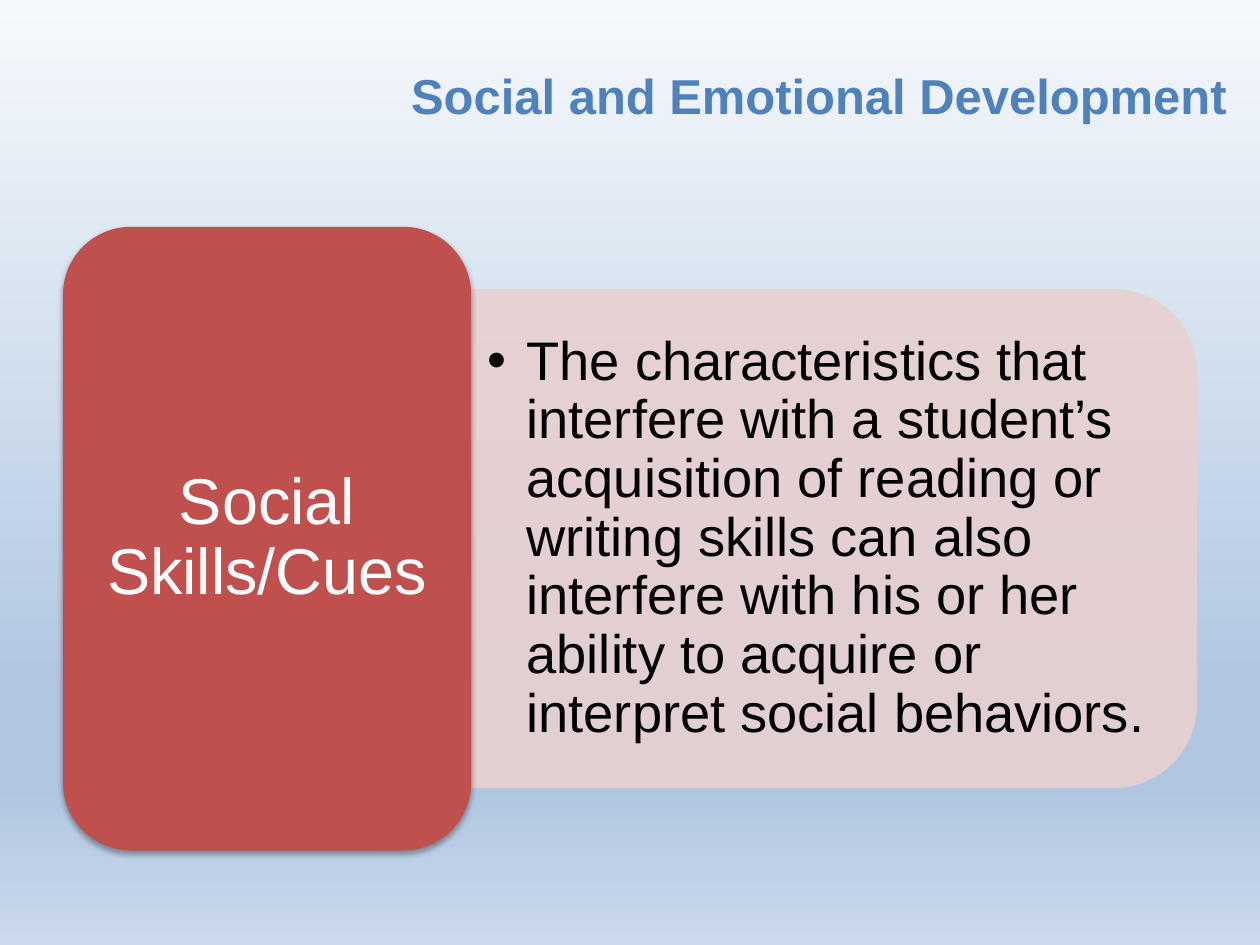
from lxml.etree import SubElement
from pptx import Presentation
from pptx.dml.color import RGBColor
from pptx.enum.shapes import MSO_SHAPE as Form
from pptx.enum.text import MSO_ANCHOR as Anchor, MSO_AUTO_SIZE as Fit, PP_ALIGN as Align
from pptx.oxml import parse_xml
from pptx.oxml.ns import nsdecls, qn
from pptx.util import Inches, Pt

WIDE, HIGH = 10, 7.5
STOPS = [(0, "F6F9FC"), (74, "B0C6E1"), (83, "B0C6E1"), (100, "CAD9EB")]


def tint(color, code):
    color.rgb = RGBColor.from_string(code)


def place(shape, box):
    shape.left, shape.top, shape.width, shape.height = map(Inches, box)


def write(shape, text, size, code, align, pads=(0.1, 0.05), bold=False, space=1.0):
    """Fill a shape with one formatted paragraph, centred in height."""
    frame = shape.text_frame
    frame.text = text
    frame.word_wrap = True
    frame.auto_size = Fit.NONE
    frame.vertical_anchor = Anchor.MIDDLE
    frame.margin_left = frame.margin_right = Inches(pads[0])
    frame.margin_top = frame.margin_bottom = Inches(pads[1])
    para = frame.paragraphs[0]
    para.alignment = align
    para.line_spacing = space
    para.space_before = Pt(0)
    font = para.runs[0].font
    font.name, font.size, font.bold = "Arial", Pt(size), bold
    tint(font.color, code)
    return para


def block(slide, form, box, code):
    shape = slide.shapes.add_shape(form, *map(Inches, box))
    shape.shadow.inherit = False
    shape.fill.solid()
    tint(shape.fill.fore_color, code)
    shape.line.fill.background()
    return shape


def paint(slide):
    """Vertical four-stop background."""
    fill = slide.background.fill
    fill.gradient()
    fill.gradient_angle = 270
    root = slide.background._cSld.find(".//" + qn("a:gsLst"))
    for stop in list(root):
        root.remove(stop)
    for spot, code in STOPS:
        stop = SubElement(root, qn("a:gs"), pos=str(spot * 1000))
        SubElement(stop, qn("a:srgbClr"), val=code)


def head(slide, box):
    title = slide.shapes.title
    place(title, box)
    write(title, "Social and Emotional Development", 28, "4F81BD", Align.CENTER, bold=True)


def panel(slide, box):
    """Pale panel rounded on its right side, with the bullet on top."""
    left, top, wide, high = box
    # The form is turned a quarter, so its sides swap around the same centre
    turn = (left + (wide - high) / 2, top + (high - wide) / 2, high, wide)
    shape = block(slide, Form.ROUND_2_SAME_RECTANGLE, turn, "E8D0D0")
    shape.rotation = 90
    color = shape.fill._xPr.find(".//" + qn("a:srgbClr"))
    SubElement(color, qn("a:alpha"), val="90000")

    body = slide.placeholders[1]
    place(body, (left, top + 0.19, wide - 0.19, high - 0.38))
    slide.shapes._spTree.append(body._element)
    para = write(
        body,
        "The characteristics that interfere with a student’s acquisition of reading "
        "or writing skills can also interfere with his or her ability to acquire or "
        "interpret social behaviors.",
        31, "000000", Align.LEFT, (0.13, 0.06), space=0.9)
    props = para._p.get_or_add_pPr()
    props.set("marL", str(Inches(0.31)))
    props.set("indent", str(-Inches(0.31)))
    SubElement(props, qn("a:buChar"), char="•")


def card(slide, box):
    """Red label card with a soft shadow below."""
    shape = block(slide, Form.ROUNDED_RECTANGLE, box, "C0504D")
    glow = shape._element.spPr.find(qn("a:effectLst"))
    glow.append(parse_xml(
        f'<a:outerShdw {nsdecls("a")} blurRad="{Pt(3.1)}" dist="{Pt(1.8)}" '
        'dir="5400000" rotWithShape="0"><a:srgbClr val="000000">'
        '<a:alpha val="35000"/></a:srgbClr></a:outerShdw>'))
    # The rounded corners already hold the text in, so the margins stay small
    write(shape, "Social Skills/Cues", 37, "FFFFFF", Align.CENTER, (0.15, 0.08), space=0.9)


def main():
    deck = Presentation()
    deck.slide_width, deck.slide_height = Inches(WIDE), Inches(HIGH)
    slide = deck.slides.add_slide(deck.slide_layouts[1])
    paint(slide)
    head(slide, (0.3 * WIDE, 0.03 * HIGH, 0.7 * WIDE, 0.14 * HIGH))

    # The card takes 36 % of the row; the panel is 80 % of its height
    left, top, wide, high = 0.05 * WIDE, 0.24 * HIGH, 0.9 * WIDE, 0.66 * HIGH
    split = 0.36 * wide
    panel(slide, (left + split, top + 0.1 * high, wide - split, 0.8 * high))
    card(slide, (left, top, split, high))
    deck.save("out.pptx")


if __name__ == "__main__":
    main()
